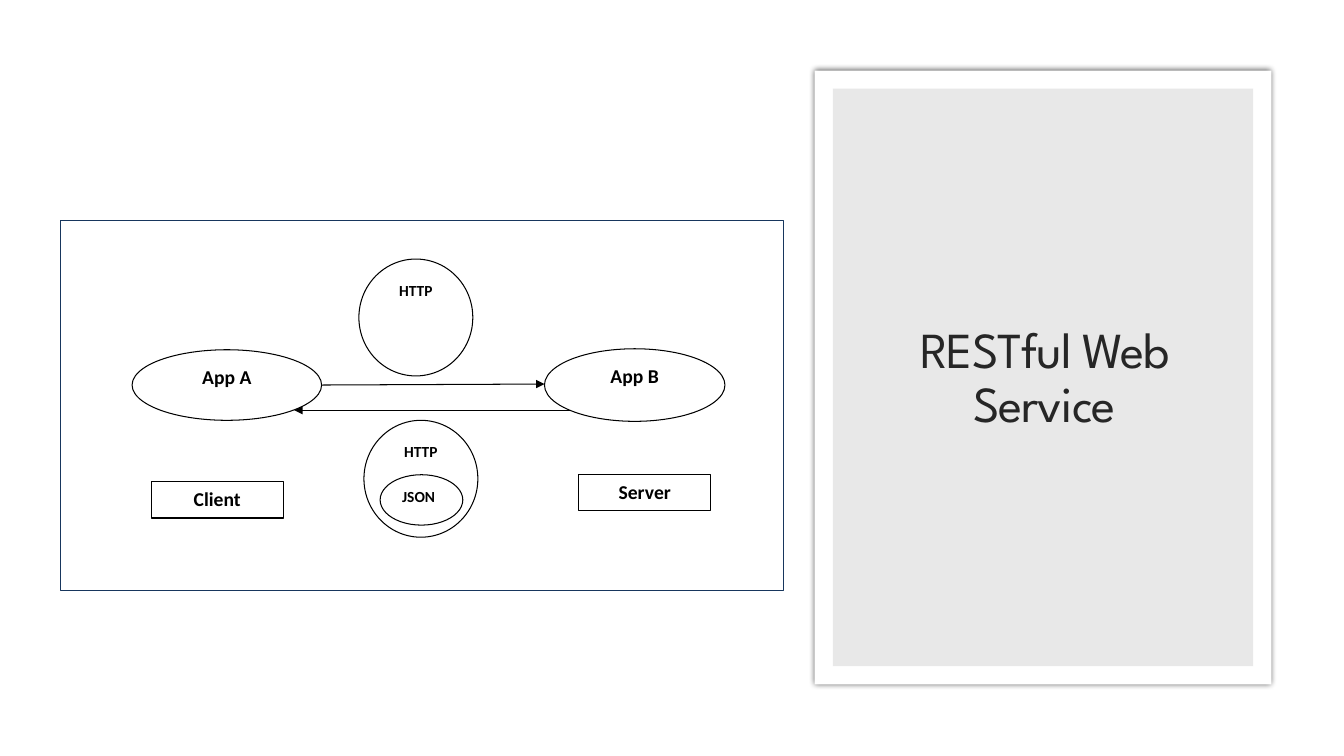
from lxml import etree
from pptx import Presentation
from pptx.dml.color import RGBColor
from pptx.enum import shapes, text
from pptx.oxml import ns
from pptx.util import Inches, Pt

# Content: kind, label, size key, alignment, (left, top, width, height)
TITLE = "RESTful Web Service"
NODES = [
    ("ellipse", "App A", "node", "center", (1.31, 3.47, 1.88, 0.70)),
    ("rect", "Client", "node", "center", (1.50, 4.78, 1.31, 0.36)),
    ("ellipse", "App B", "node", "center", (5.40, 3.46, 1.79, 0.72)),
    ("rect", "Server", "node", "center", (5.74, 4.71, 1.31, 0.36)),
    ("ellipse", "HTTP", "message", "center", (3.61, 4.17, 1.13, 1.16)),
    ("ellipse", "JSON", "message", "left", (3.77, 4.71, 0.82, 0.50)),
    ("ellipse", "HTTP", "message", "center", (3.56, 2.57, 1.13, 1.16)),
]
ARROWS = {
    "request": ((3.19, 3.82), (5.40, 3.81)),
    "response": ((5.66, 4.07), (2.92, 4.07)),
}
FRAME = (0.60, 2.19, 7.17, 3.67)
CARD = (8.08, 0.70, 4.53, 6.09)
CARD_MARGIN = 0.18
TITLE_BOX = (8.47, 1.06, 3.78, 5.40)

THEME = {
    "white": "FFFFFF", "black": "000000", "frame": "17365D",
    "panel": "D9D9D9", "title_ink": "262626",
    "title": 36, "node": 14, "message": 11, "line": 0.75,
    "body_font": "Calibri", "title_font": "League Spartan",
}
KINDS = {"rect": shapes.MSO_SHAPE.RECTANGLE, "ellipse": shapes.MSO_SHAPE.OVAL}
ALIGN = {"center": text.PP_ALIGN.CENTER, "left": text.PP_ALIGN.LEFT}


def color(name):
    return RGBColor.from_string(THEME[name])


def add_box(parent, kind, box, fill=None, line=None):
    shape = parent.shapes.add_shape(KINDS[kind], *map(Inches, box))
    shape.shadow.inherit = False
    if fill:
        shape.fill.solid()
        shape.fill.fore_color.rgb = color(fill)
    else:
        shape.fill.background()
    if line:
        shape.line.color.rgb = color(line)
        shape.line.width = Pt(THEME["line"])
    else:
        shape.line.fill.background()
    return shape


def write(shape, words, size, font="body_font", ink="black", bold=False,
          align="center", anchor=text.MSO_ANCHOR.TOP, spacing=None, tracking=None):
    frame = shape.text_frame
    frame.word_wrap = True
    frame.auto_size = text.MSO_AUTO_SIZE.NONE
    frame.vertical_anchor = anchor
    paragraph = frame.paragraphs[0]
    paragraph.alignment = ALIGN[align]
    paragraph.line_spacing = spacing
    run = paragraph.add_run()
    run.text = words
    run.font.name = THEME[font]
    run.font.size = Pt(THEME[size])
    run.font.bold = bold
    run.font.color.rgb = color(ink)
    if tracking is not None:
        run.font._element.set("spc", str(round(tracking * 100)))


def add_arrow(parent, start, end):
    arrow = parent.shapes.add_connector(
        shapes.MSO_CONNECTOR.STRAIGHT, *map(Inches, start + end))
    arrow.line.color.rgb = color("black")
    arrow.line.width = Pt(THEME["line"])
    etree.SubElement(arrow.line._get_or_add_ln(), ns.qn("a:tailEnd"), type="triangle")
    etree.SubElement(arrow._element.spPr, ns.qn("a:effectLst"))


def add_soft_shadow(shape, blur, opacity):
    effects = shape._element.spPr.find(ns.qn("a:effectLst"))
    shadow = etree.SubElement(effects, ns.qn("a:outerShdw"),
                              blurRad=str(Pt(blur)), dist="0", dir="0",
                              algn="ctr", rotWithShape="0")
    tint = etree.SubElement(shadow, ns.qn("a:srgbClr"), val=THEME["black"])
    etree.SubElement(tint, ns.qn("a:alpha"), val=str(opacity * 1000))


def set_opacity(shape, opacity):
    tint = shape._element.spPr.find(ns.qn("a:solidFill"))[0]
    etree.SubElement(tint, ns.qn("a:alpha"), val=str(opacity * 1000))


def main():
    presentation = Presentation()
    presentation.slide_width = Inches(13.33)
    presentation.slide_height = Inches(7.5)
    slide = presentation.slides.add_slide(presentation.slide_layouts[5])
    slide.background.fill.solid()
    slide.background.fill.fore_color.rgb = color("white")

    # Title card: white card with a translucent grey panel inside
    card = add_box(slide, "rect", CARD, fill="white")
    add_soft_shadow(card, blur=4, opacity=66)
    left, top, width, height = CARD
    panel_box = (left + CARD_MARGIN, top + CARD_MARGIN,
                 width - 2 * CARD_MARGIN, height - 2 * CARD_MARGIN)
    panel = add_box(slide, "rect", panel_box, fill="panel")
    set_opacity(panel, 60)

    # Title, brought in front of its card
    title = slide.shapes.title
    title.left, title.top, title.width, title.height = map(Inches, TITLE_BOX)
    write(title, TITLE, "title", font="title_font", ink="title_ink",
          anchor=text.MSO_ANCHOR.MIDDLE, spacing=0.9, tracking=-0.7)
    panel._element.addnext(title._element)

    # Diagram: arrows lie behind the nodes they do not touch
    diagram = slide.shapes.add_group_shape()
    add_box(diagram, "rect", FRAME, line="frame")
    for kind, label, size, align, box in NODES:
        node = add_box(diagram, kind, box, fill="white", line="black")
        write(node, label, size, bold=True, align=align)
        if label == "Client":
            add_arrow(diagram, *ARROWS["request"])
        elif label == "App B":
            add_arrow(diagram, *ARROWS["response"])

    presentation.save("out.pptx")


if __name__ == "__main__":
    main()
